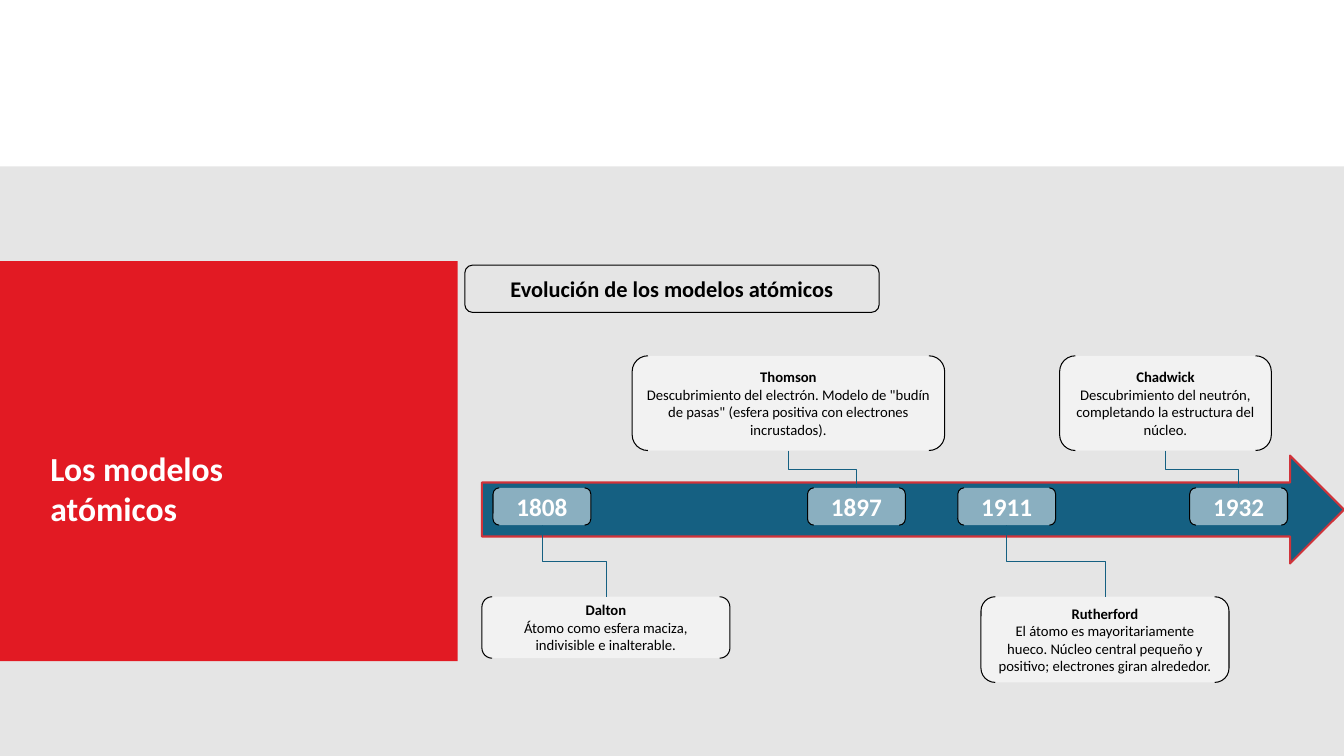
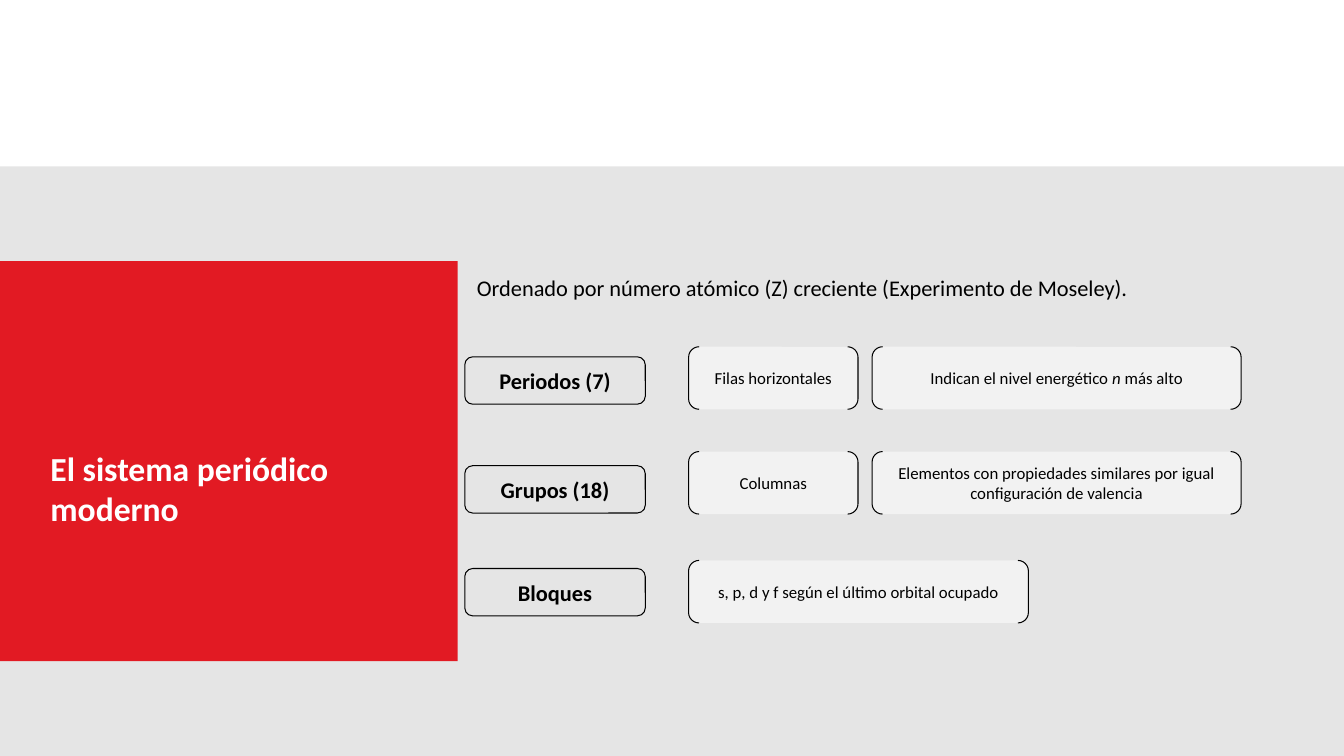
from dataclasses import dataclass

from pptx import Presentation
from pptx.dml.color import RGBColor as Rgb
from pptx.enum.shapes import MSO_CONNECTOR as Link, MSO_SHAPE as Form
from pptx.enum.text import MSO_ANCHOR as Anchor, MSO_AUTO_SIZE as Fit, PP_ALIGN as Align
from pptx.oxml.ns import qn
from pptx.util import Inches, Pt
from lxml.etree import SubElement


@dataclass(frozen=True)
class Theme:
    font: str = "Calibri"
    white: str = "FFFFFF"
    black: str = "000000"
    gray: str = "E5E5E5"
    red: str = "E21A23"
    edge: str = "D0333A"
    blue: str = "156082"
    title: float = 24
    year: float = 18
    head: float = 16
    body: float = 12
    note: float = 10.5
    thin: float = 0.5
    line: float = 0.75
    thick: float = 1.5


class Deck:
    def __init__(self, theme):
        self.theme = theme
        self.prs = Presentation()
        self.prs.slide_width, self.prs.slide_height = Inches(13.33), Inches(7.5)
        self.layout = self.prs.slide_layouts[5]
        self.slide = None

    # Slide with its title; the first one also sets up the shared bands
    def page(self, title, width):
        first = self.slide is None
        self.slide = self.prs.slides.add_slide(self.layout)
        if first:
            self.bands()
        box = self.slide.shapes.title
        box.left, box.top, box.width, box.height = map(Inches, (0.4, 4.39, width, 0.91))
        frame = box.text_frame
        frame.word_wrap = True
        frame.auto_size = Fit.SHAPE_TO_FIT_TEXT
        frame.vertical_anchor = Anchor.TOP
        self.text(frame, [[(title, "b")]], self.theme.title, self.theme.white, Align.LEFT)

    # Bands live in the layout, behind everything else
    def bands(self):
        tree = self.layout.shapes.element
        areas = [(0, 1.65, 13.33, 5.85, self.theme.gray), (0, 2.59, 4.54, 3.97, self.theme.red)]
        for i, (*area, color) in enumerate(areas):
            band = self.shape(Form.RECTANGLE, area, fill=color).element
            band.nvSpPr.cNvPr.set("id", str(20 + i))
            tree.insert(2 + i, band)

    # Text, run by run; a style is "", "b" or "i"
    def text(self, frame, paras, size, color, align=Align.CENTER):
        for i, runs in enumerate(paras):
            para = frame.add_paragraph() if i else frame.paragraphs[0]
            para.alignment = align
            for words, style in runs:
                run = para.add_run()
                run.text = words
                font = run.font
                font.name, font.size = self.theme.font, Pt(size)
                font.bold, font.italic = style == "b", style == "i"
                font.color.rgb = Rgb.from_string(color)

    def shape(self, form, area, fill=None, line=None, width=0.75):
        item = self.slide.shapes.add_shape(form, *map(Inches, area))
        item.shadow.inherit = False
        if fill:
            item.fill.solid()
            item.fill.fore_color.rgb = Rgb.from_string(fill)
        else:
            item.fill.background()
        if line:
            item.line.color.rgb = Rgb.from_string(line)
            item.line.width = Pt(width)
        else:
            item.line.fill.background()
        return item

    # Rounded heading, with or without an outline
    def label(self, area, words, style="b", line=True, align=Align.CENTER):
        edge = self.theme.black if line else None
        item = self.shape(Form.ROUNDED_RECTANGLE, area, line=edge, width=self.theme.line)
        self.text(item.text_frame, [[(words, style)]], self.theme.head, self.theme.black, align)

    # Half-transparent box between brackets
    def card(self, area, paras, size, color=None):
        theme = self.theme
        item = self.shape(Form.DOUBLE_BRACKET, area, theme.white, theme.black, theme.line)
        tint = item.element.spPr.find(qn("a:solidFill")).find(qn("a:srgbClr"))
        SubElement(tint, qn("a:alpha"), val="50000")
        self.text(item.text_frame, paras, size, color or theme.black)
        return item

    # Elbow from the bottom of one shape down and right to the top of another
    def elbow(self, upper, lower):
        link = self.slide.shapes.add_connector(Link.ELBOW, 0, 0, 0, 0)
        link.begin_connect(upper, 2)
        link.end_connect(lower, 0)
        link.line.color.rgb = Rgb.from_string(self.theme.blue)
        link.line.width = Pt(self.theme.thin)
        wide, high = link.width, link.height
        link.left += (wide - high) // 2
        link.top += (high - wide) // 2
        link.width, link.height = high, wide
        props = link.element.spPr
        turn = props.find(qn("a:xfrm"))
        turn.set("rot", "16200000")
        turn.set("flipH", "1")
        SubElement(props, qn("a:effectLst"))


def models(deck):
    theme = deck.theme
    deck.page("Los modelos atómicos", 3.01)
    deck.label((4.61, 2.63, 4.11, 0.47), "Evolución de los modelos atómicos")
    deck.shape(Form.RIGHT_ARROW, (4.78, 4.52, 8.55, 1.07), theme.blue, theme.edge, theme.thick)

    # Year, its left edge, author, finding, card area
    above, below = 3.53, 5.92
    events = [
        ("1808", 4.89, "Dalton", "Átomo como esfera maciza, indivisible e inalterable.",
         (4.78, below, 2.46, 0.61)),
        ("1897", 8.01, "Thomson", 'Descubrimiento del electrón. Modelo de "budín de pasas" '
         "(esfera positiva con electrones incrustados).", (6.27, above, 3.1, 0.94)),
        ("1911", 9.5, "Rutherford", "El átomo es mayoritariamente hueco. Núcleo central "
         "pequeño y positivo; electrones giran alrededor.", (9.73, below, 2.46, 0.85)),
        ("1932", 11.8, "Chadwick", "Descubrimiento del neutrón, completando la estructura "
         "del núcleo.", (10.51, above, 2.1, 0.94)),
    ]
    for year, left, name, words, area in events:
        card = deck.card(area, [[(name, "b")], [(words, "")]], theme.note)
        date = deck.card((left, 4.84, 0.97, 0.37), [[(year, "b")]], theme.year, theme.white)
        pair = (card, date) if area[1] == above else (date, card)
        deck.elbow(*pair)


def system(deck):
    deck.page("El sistema periódico moderno", 3.52)
    deck.label((4.61, 2.62, 7.8, 0.47),
               "Ordenado por número atómico (Z) creciente (Experimento de Moseley).",
               style="", line=False, align=Align.LEFT)

    # Label top, label, card top, cards as left, width and runs
    near, far = (6.83, 1.68), (8.65, 3.66)
    rows = [
        (3.54, "Periodos (7)", 3.44, [
            (*near, [("Filas horizontales", "")]),
            (*far, [("Indican el nivel energético ", ""), ("n", "i"), (" más alto", "")])]),
        (4.62, "Grupos (18)", 4.48, [
            (*near, [("Columnas", "")]),
            (*far, [("Elementos con propiedades similares por igual "
                     "configuración de valencia", "")])]),
        (5.64, "Bloques", 5.56, [
            (6.83, 3.37, [("s, p, d y f según el último orbital ocupado", "")])]),
    ]
    for top, name, level, cards in rows:
        deck.label((4.61, top, 1.79, 0.47), name)
        for left, width, runs in cards:
            deck.card((left, level, width, 0.62), [runs], deck.theme.body)


def main():
    deck = Deck(Theme())
    models(deck)
    system(deck)
    deck.prs.save("out.pptx")


if __name__ == "__main__":
    main()
